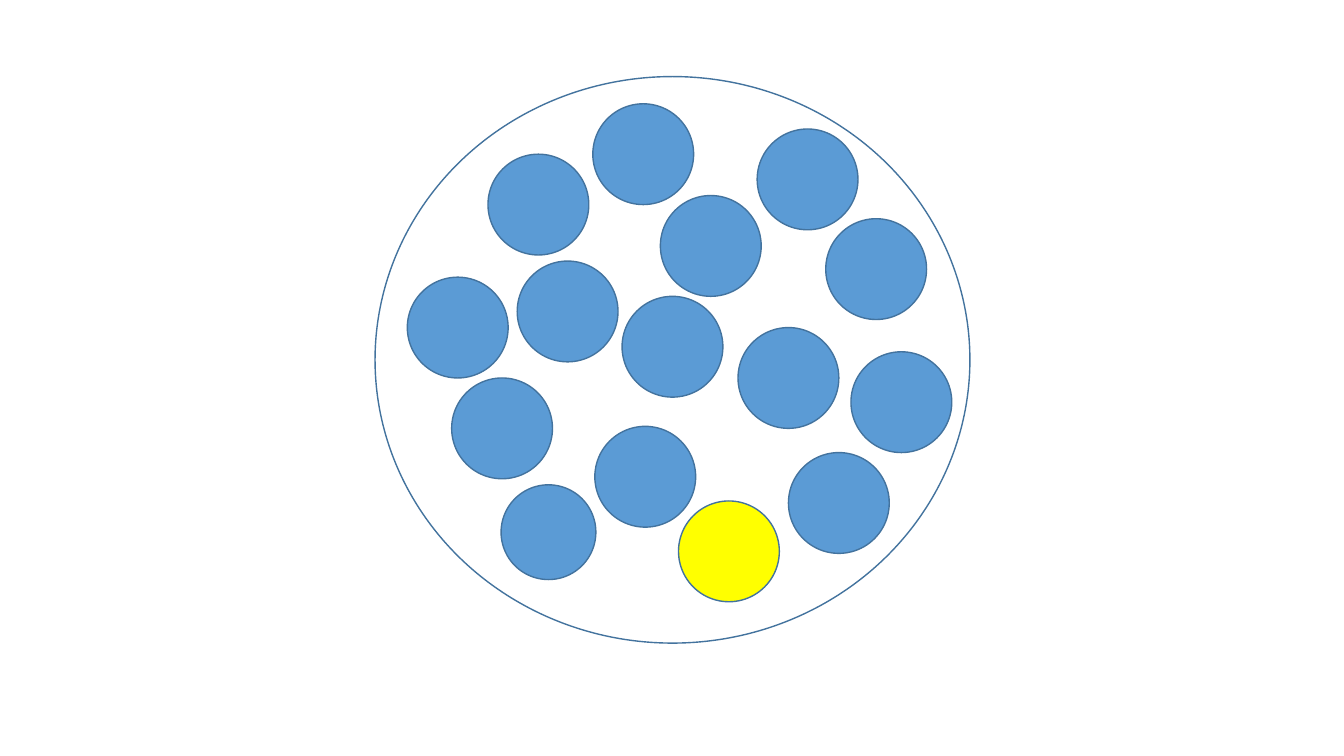
from pptx import Presentation
from pptx.dml.color import RGBColor as RGB
from pptx.enum.shapes import MSO_SHAPE
from pptx.util import Pt

PX = 9144  # EMU per px, 100 px to the inch
THEME = {
    "dish": RGB(0xFF, 0xFF, 0xFF),
    "ball": RGB(0x5B, 0x9B, 0xD5),
    "marked": RGB(0xFF, 0xFF, 0x00),
    "outline": RGB(0x43, 0x73, 0x9E),
    "outline_width": Pt(1),
}
BALL = 100
SMALL_BALL = 94

prs = Presentation()
prs.slide_width, prs.slide_height = 1333 * PX, 750 * PX
s = prs.slides.add_slide(prs.slide_layouts[6])


def add_ellipse(x, y, w, h, fill):
    sp = s.shapes.add_shape(MSO_SHAPE.OVAL, x * PX, y * PX, w * PX, h * PX)
    sp.shadow.inherit = False
    sp.fill.solid()
    sp.fill.fore_color.rgb = THEME[fill]
    sp.line.color.rgb = THEME["outline"]
    sp.line.width = THEME["outline_width"]


add_ellipse(372, 76, 590, 562, "dish")

# Left, top, diameter and fill of each ball, from back to front
balls = [
    (513, 259, BALL, "ball"),
    (819, 217, BALL, "ball"),
    (655, 194, BALL, "ball"),
    (588, 103, BALL, "ball"),
    (497, 481, SMALL_BALL, "ball"),
    (673, 497, BALL, "marked"),
    (590, 423, BALL, "ball"),
    (448, 375, BALL, "ball"),
    (404, 275, BALL, "ball"),
    (617, 294, BALL, "ball"),
    (844, 349, BALL, "ball"),
    (782, 449, BALL, "ball"),
    (484, 153, BALL, "ball"),
    (732, 325, BALL, "ball"),
    (751, 128, BALL, "ball"),
]
for x, y, size, fill in balls:
    add_ellipse(x, y, size, size, fill)

prs.save("out.pptx")
